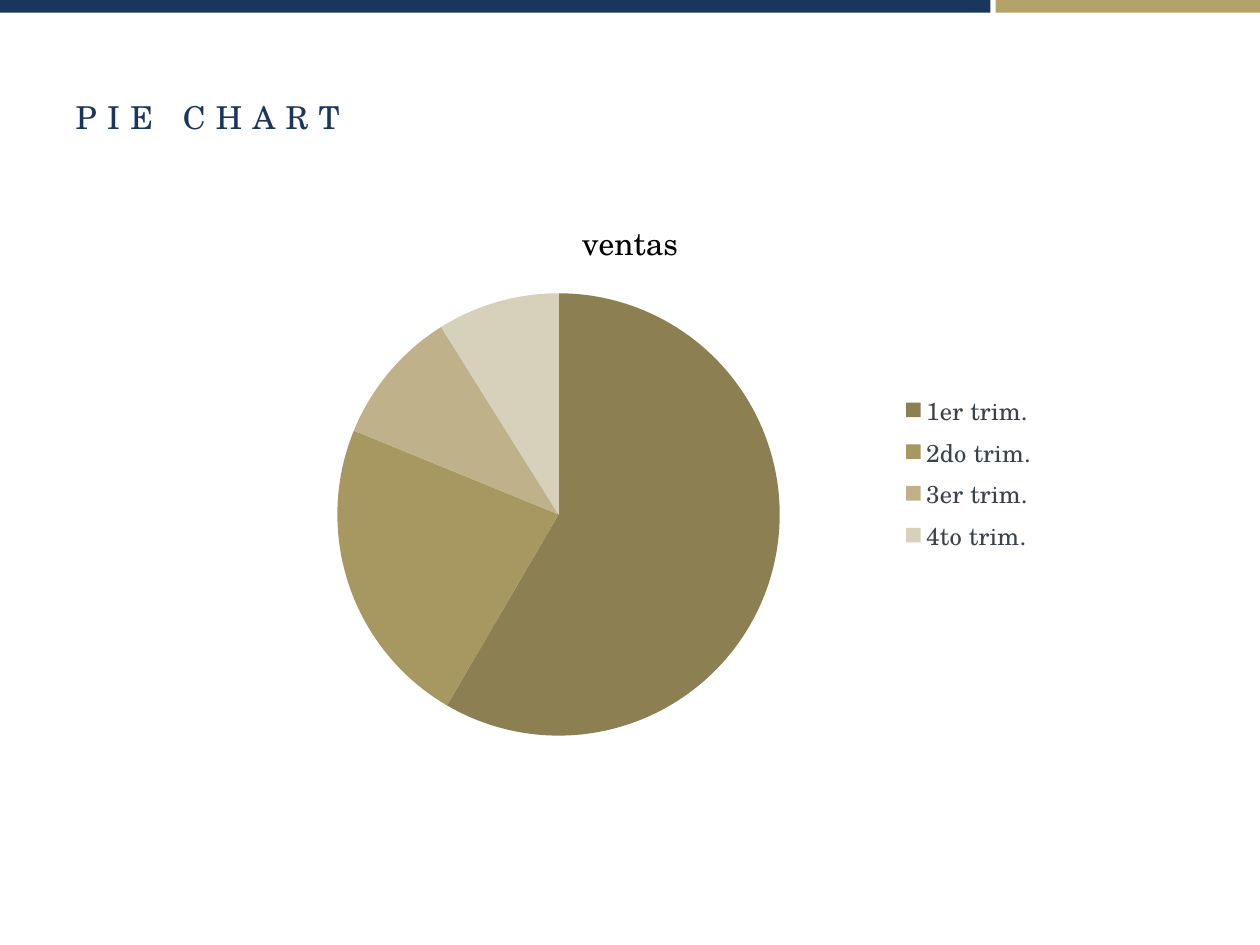
from pptx import Presentation
from pptx.chart.data import CategoryChartData
from pptx.dml.color import RGBColor
from pptx.enum.chart import XL_CHART_TYPE as Kind, XL_LEGEND_POSITION as Side
from pptx.enum.shapes import MSO_SHAPE as Shape
from pptx.enum.text import MSO_ANCHOR as Anchor, PP_ALIGN as Align
from pptx.oxml import parse_xml
from pptx.oxml.ns import nsdecls
from pptx.util import Pt

FACE = "TeX Gyre Schola"
HEX = {"navy": "1B365D", "gold": "B3A369", "title": "1A365D",
       "black": "000000", "legend": "3A434A"}
TRIMS = [("1er trim.", 59, "8C8052"), ("2do trim.", 23, "A69860"),
         ("3er trim.", 10, "BFB18A"), ("4to trim.", 9, "D7D0BB")]
PLOT = {"x": 0.15, "y": 0.18, "w": 0.53, "h": 0.79}


def style(font, size, color, face=FACE):
    font.name, font.size, font.bold = face, Pt(size), False
    font.color.rgb = RGBColor.from_string(color)


def paint(fill, color):
    fill.solid()
    fill.fore_color.rgb = RGBColor.from_string(color)


def add_bar(slide, left, width, color):
    bar = slide.shapes.add_shape(Shape.RECTANGLE, Pt(left), 0, Pt(width), Pt(7.2))
    bar.shadow.inherit = False
    paint(bar.fill, color)
    bar.line.fill.background()


def set_title(slide, text):
    title = slide.shapes.title
    title.left, title.top, title.width, title.height = Pt(36), Pt(21.6), Pt(648), Pt(90)
    frame = title.text_frame
    frame.text = text
    frame.vertical_anchor = Anchor.MIDDLE
    para = frame.paragraphs[0]
    para.alignment = Align.LEFT
    run = para.runs[0]
    style(run.font, 18, HEX["title"])
    run.font._element.set("spc", "600")


def place_plot(chart):
    """Fix the inner plot area as fractions of the chart."""
    modes = "".join(f'<c:{k}Mode val="edge"/>' for k in "xy")
    sizes = "".join(f'<c:{k} val="{v}"/>' for k, v in PLOT.items())
    area = chart._chartSpace.chart.plotArea
    for old in area.xpath("c:layout"):
        area.remove(old)
    area.insert(0, parse_xml(
        f'<c:layout {nsdecls("c")}><c:manualLayout><c:layoutTarget val="inner"/>'
        f'{modes}{sizes}</c:manualLayout></c:layout>'))


def add_pie(slide):
    names, vals, tints = zip(*TRIMS)
    data = CategoryChartData()
    data.categories = names
    data.add_series("Series 1", vals)
    chart = slide.shapes.add_chart(
        Kind.PIE, Pt(120), Pt(110), Pt(480), Pt(320), data).chart
    style(chart.font, 18, HEX["black"], "Calibri")

    chart.has_title = True
    frame = chart.chart_title.text_frame
    frame.text = "ventas"
    style(frame.paragraphs[0].runs[0].font, 18, HEX["black"])
    chart.chart_title.include_in_layout = False

    chart.has_legend = True
    chart.legend.position = Side.RIGHT
    chart.legend.include_in_layout = False
    style(chart.legend.font, 14, HEX["legend"])

    plot = chart.plots[0]
    plot.vary_by_categories = True
    for i, tint in enumerate(tints):
        paint(plot.series[0].points[i].format.fill, tint)
    place_plot(chart)


def main():
    deck = Presentation()
    deck.slide_width, deck.slide_height = Pt(720), Pt(540)
    slide = deck.slides.add_slide(deck.slide_layouts[5])
    add_bar(slide, 0, 566, HEX["navy"])
    add_bar(slide, 569, 151, HEX["gold"])
    set_title(slide, "PIE CHART")
    add_pie(slide)
    deck.save("out.pptx")


if __name__ == "__main__":
    main()
